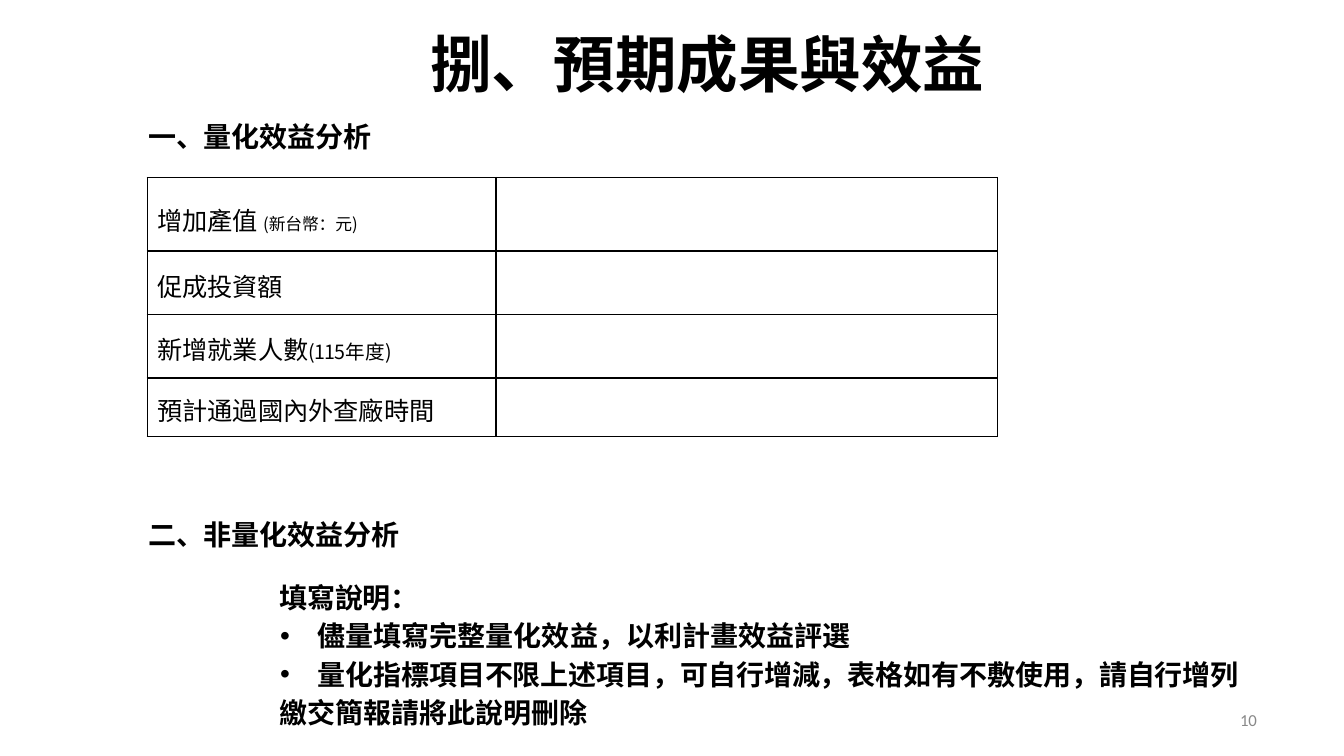
import pptx
import pptx.util
import pptx.dml.color
import pptx.enum.text
import pptx.oxml.ns
import lxml.etree
from dataclasses import dataclass

Inches = pptx.util.Inches
Pt = pptx.util.Pt


@dataclass(frozen=True)
class Theme:
    ink: str = "000000"
    muted: str = "888888"
    sans: str = "Noto Sans CJK SC"
    latin: str = "Calibri"
    title: int = 44
    body: int = 20
    cell: int = 18
    small: int = 14
    tiny: int = 12
    rule: float = 1


theme = Theme()

# Content: boxes are left, top, width, height; table runs are text, size, spacing
TITLE = ("捌、預期成果與效益", (4.26, 0.25, 5.63, 0.75))
HEADINGS = [
    ("一、量化效益分析", (1.46, 1.18, 2.25, 0.35)),
    ("二、非量化效益分析", (1.46, 5.12, 2.63, 0.35)),
]
PAGE_NUMBER = ("10", (12.29, 7.07, 0.32, 0.17))

TABLE_PLACE = (1.46, 1.76)
COLUMN_WIDTHS = [3.46, 4.97]
# Row height, top inset, runs of the label
ROWS = [
    (0.73, 0.1, [("增加產值 ", theme.cell, -0.1), ("(新台幣：元)", theme.tiny, -0.1)]),
    (0.63, 0.05, [("促成投資額", theme.cell, -0.1)]),
    (0.63, 0.05, [("新增就業人數", theme.cell, 0), ("(115", theme.small, -0.5),
                  ("年度", theme.small, 0), (")", theme.small, -0.5)]),
    (0.58, 0.05, [("預計通過國內外查廠時間", theme.cell, 0)]),
]

NOTES_BOX = (2.76, 5.71, 9.77, 1.54)
NOTES_INDENT, NOTES_HANG, NOTES_LEADING = 0.39, -0.37, 26.6
# Text, bulleted, letter spacing, font
NOTES = [
    ("填寫說明：", False, -0.1, theme.sans),
    ("儘量填寫完整量化效益，以利計畫效益評選", True, 0, theme.sans),
    ("量化指標項目不限上述項目，可自行增減，表格如有不敷使用，請自行增列", True, -0.1, theme.sans),
    ("繳交簡報請將此說明刪除", False, 0, theme.latin),
]


def add_node(parent, tag, **attributes):
    node = lxml.etree.SubElement(parent, pptx.oxml.ns.qn(tag))
    for key, value in attributes.items():
        node.set(key, str(value))
    return node


def add_span(para, text, size, spacing=0, bold=False, color=theme.ink, font=theme.sans):
    span = para.add_run()
    span.text = text
    span.font.size = Pt(size)
    span.font.bold = bold
    span.font.name = font
    span.font.color.rgb = pptx.dml.color.RGBColor.from_string(color)
    properties = span.font._element
    properties.set("spc", str(round(spacing * 100)))
    add_node(properties, "a:ea", typeface=theme.sans)


def indent(para, left, first=0):
    properties = para._p.get_or_add_pPr()
    properties.set("marL", str(Inches(left)))
    properties.set("indent", str(Inches(first)))
    return properties


def prepare_frame(box, top_inset=0.01):
    frame = box.text_frame
    frame.word_wrap = True
    frame.auto_size = pptx.enum.text.MSO_AUTO_SIZE.SHAPE_TO_FIT_TEXT
    frame.vertical_anchor = pptx.enum.text.MSO_ANCHOR.TOP
    frame.margin_left = frame.margin_right = frame.margin_bottom = 0
    frame.margin_top = Inches(top_inset)
    para = frame.paragraphs[0]
    para.alignment = pptx.enum.text.PP_ALIGN.LEFT
    indent(para, 0.01)
    return frame


def add_box(page, place, top_inset=0.01):
    box = page.shapes.add_textbox(*map(Inches, place))
    return prepare_frame(box, top_inset)


def add_title(page):
    text, place = TITLE
    box = page.shapes.title
    box.left, box.top, box.width, box.height = map(Inches, place)
    para = prepare_frame(box).paragraphs[0]
    add_span(para, text, theme.title, -0.1, bold=True)


def format_cell(cell, top_inset):
    cell.margin_left = cell.margin_right = cell.margin_bottom = 0
    cell.margin_top = Inches(top_inset)
    cell.vertical_anchor = pptx.enum.text.MSO_ANCHOR.MIDDLE
    properties = cell._tc.get_or_add_tcPr()
    for side in ("a:lnL", "a:lnR", "a:lnT", "a:lnB"):
        line = add_node(properties, side, w=Pt(theme.rule))
        add_node(add_node(line, "a:solidFill"), "a:srgbClr", val=theme.ink)
    cell.fill.background()


def add_benefit_table(page):
    size = (sum(COLUMN_WIDTHS), sum(row[0] for row in ROWS))
    table = page.shapes.add_table(len(ROWS), len(COLUMN_WIDTHS),
                                  *map(Inches, TABLE_PLACE + size)).table
    table.first_row = table.horz_banding = False
    for column, width in zip(table.columns, COLUMN_WIDTHS):
        column.width = Inches(width)
    for row, (height, top_inset, label) in zip(table.rows, ROWS):
        row.height = Inches(height)
        for cell in row.cells:
            format_cell(cell, top_inset)
        para = row.cells[0].text_frame.paragraphs[0]
        indent(para, 0.1)
        for text, points, spacing in label:
            add_span(para, text, points, spacing)


def add_notes(page):
    frame = add_box(page, NOTES_BOX)
    for index, (text, bulleted, spacing, font) in enumerate(NOTES):
        para = frame.add_paragraph() if index else frame.paragraphs[0]
        if bulleted:
            properties = indent(para, NOTES_INDENT, NOTES_HANG)
            add_node(properties, "a:buFont", typeface="Arial")
            add_node(properties, "a:buChar", char="•")
        else:
            properties = indent(para, 0.01)
        tabs = add_node(properties, "a:tabLst")
        add_node(tabs, "a:tab", pos=Inches(NOTES_INDENT), algn="l")
        para.line_spacing = Pt(NOTES_LEADING)
        if index:
            para.space_before = Pt(1)
        add_span(para, text, theme.body, spacing, bold=True, font=font)


def main():
    deck = pptx.Presentation()
    deck.slide_width, deck.slide_height = Inches(13.33), Inches(7.5)
    page = deck.slides.add_slide(deck.slide_layouts[5])

    # Title and section headings
    add_title(page)
    for text, place in HEADINGS:
        para = add_box(page, place).paragraphs[0]
        add_span(para, text, theme.body, -0.1, bold=True)

    # Quantified benefits and filling-in notes
    add_benefit_table(page)
    add_notes(page)

    # Page number
    text, place = PAGE_NUMBER
    para = add_box(page, place, top_inset=0).paragraphs[0]
    para.line_spacing = Pt(12.4)
    add_span(para, text, theme.tiny, -0.2, color=theme.muted, font=theme.latin)

    deck.save("out.pptx")


if __name__ == "__main__":
    main()
